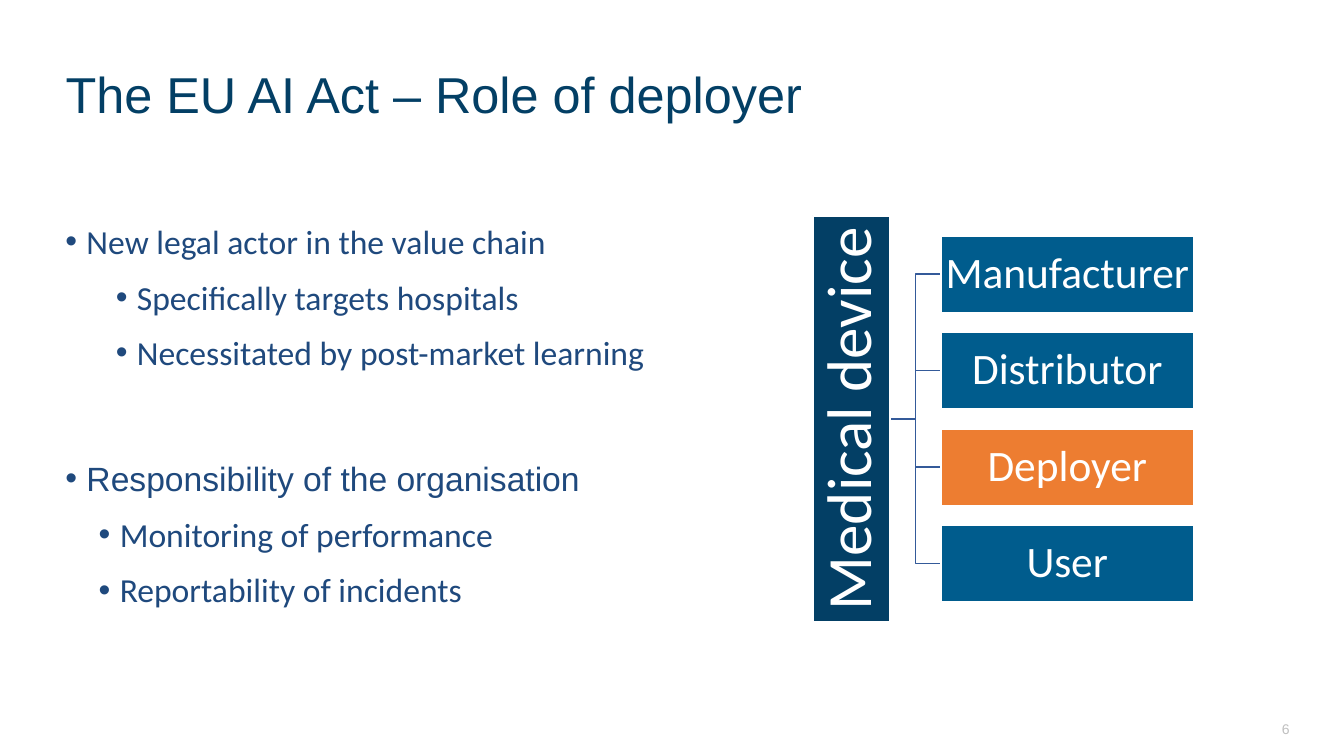
from lxml.etree import SubElement
from pptx import Presentation
from pptx.dml.color import RGBColor
from pptx.enum.shapes import MSO_CONNECTOR, MSO_SHAPE
from pptx.enum.text import MSO_ANCHOR, MSO_AUTO_SIZE, PP_ALIGN
from pptx.oxml.ns import qn
from pptx.util import Inches, Pt

COLOURS = {
    "navy": "033F65",
    "blue": "005C8D",
    "orange": "ED7D31",
    "text": "1F497D",
    "line": "345A99",
    "grey": "BFBFBF",
    "white": "FFFFFF",
}
LEFT, WIDTH = 0.55, 12.23
HANGING = 0.21

# Text, left indent, space before, font
BULLETS = [
    ("New legal actor in the value chain", 0.21, 0, "Calibri"),
    ("Specifically targets hospitals", 0.71, 11, "Calibri"),
    ("Necessitated by post-market learning", 0.71, 11, "Calibri"),
    ("Responsibility of the organisation", 0.21, 61, "Arial"),
    ("Monitoring of performance", 0.54, 11, "Calibri"),
    ("Reportability of incidents", 0.54, 11, "Calibri"),
]
ACTORS = [
    ("Manufacturer", "blue"),
    ("Distributor", "blue"),
    ("Deployer", "orange"),
    ("User", "blue"),
]


def colour(name):
    return RGBColor.from_string(COLOURS[name])


def add_run(paragraph, text, size, font, colour_name):
    run = paragraph.add_run()
    run.text = text
    run.font.size = Pt(size)
    run.font.name = font
    run.font.color.rgb = colour(colour_name)


def add_bullet(paragraph, indent):
    properties = paragraph._p.get_or_add_pPr()
    properties.set("marL", str(Inches(indent)))
    properties.set("indent", str(-Inches(HANGING)))
    bullet_colour = SubElement(properties, qn("a:buClr"))
    SubElement(bullet_colour, qn("a:srgbClr")).set("val", COLOURS["text"])
    SubElement(properties, qn("a:buFont")).set("typeface", "Arial")
    SubElement(properties, qn("a:buChar")).set("char", "•")


def fill_title(slide, box):
    title = slide.shapes.title
    title.left, title.top, title.width, title.height = map(Inches, box)
    frame = title.text_frame
    frame.auto_size = MSO_AUTO_SIZE.NONE
    frame.vertical_anchor = MSO_ANCHOR.MIDDLE
    paragraph = frame.paragraphs[0]
    paragraph.alignment = PP_ALIGN.LEFT
    paragraph.line_spacing = 0.9
    add_run(paragraph, "The EU AI Act – Role of deployer", 36, "Arial", "navy")


def add_bullet_list(slide, box):
    frame = slide.shapes.add_textbox(*map(Inches, box)).text_frame
    frame.word_wrap = True
    for index, (text, indent, space, font) in enumerate(BULLETS):
        paragraph = frame.add_paragraph() if index else frame.paragraphs[0]
        add_bullet(paragraph, indent)
        paragraph.level = int(indent > HANGING)
        paragraph.space_before = Pt(space)
        add_run(paragraph, text, 24, font, "text")


def add_page_number(slide, box):
    frame = slide.shapes.add_textbox(*map(Inches, box)).text_frame
    frame.margin_right = 0
    frame.word_wrap = True
    frame.vertical_anchor = MSO_ANCHOR.MIDDLE
    frame.paragraphs[0].alignment = PP_ALIGN.RIGHT
    add_run(frame.paragraphs[0], "6", 10, "Arial", "grey")


def add_block(slide, box, text, size, fill):
    block = slide.shapes.add_shape(MSO_SHAPE.RECTANGLE, *map(Inches, box))
    block.shadow.inherit = False
    block.fill.solid()
    block.fill.fore_color.rgb = colour(fill)
    block.line.color.rgb = colour("white")
    block.line.width = Pt(1.5)
    frame = block.text_frame
    frame.margin_left = frame.margin_right = Inches(0.02)
    frame.margin_top = frame.margin_bottom = Inches(0.02)
    frame.word_wrap = True
    frame.vertical_anchor = MSO_ANCHOR.MIDDLE
    paragraph = frame.paragraphs[0]
    paragraph.alignment = PP_ALIGN.CENTER
    paragraph.line_spacing = 0.9
    add_run(paragraph, text, size, "Calibri", fill and "white")
    return block


def add_branch(slide):
    branch = slide.shapes.add_connector(MSO_CONNECTOR.ELBOW, 0, 0, 0, 0)
    branch.line.color.rgb = colour("line")
    branch.line.width = Pt(1)
    SubElement(branch._element.spPr, qn("a:effectLst"))
    return branch


def add_actor_tree(slide, box):
    left, top, width, height = box
    bar = 0.19 * height
    pitch = 1.25 * bar
    actor_left = left + width / 3 + 0.01
    first_top = top + (height - bar - pitch * (len(ACTORS) - 1)) / 2

    # Branches come first so that they lie behind the blocks
    branches = [add_branch(slide) for _ in ACTORS]
    device = add_block(slide, (left, top, bar, height), "Medical device", 45, "navy")
    device.text_frame._txBody.bodyPr.set("vert", "vert270")
    for index, (name, fill) in enumerate(ACTORS):
        actor_box = (actor_left, first_top + index * pitch, left + width - actor_left, bar)
        actor = add_block(slide, actor_box, name, 31, fill)
        branches[index].begin_connect(device, 3)
        branches[index].end_connect(actor, 1)


def main():
    presentation = Presentation()
    presentation.slide_width = Inches(13.33)
    presentation.slide_height = Inches(7.5)
    slide = presentation.slides.add_slide(presentation.slide_layouts[5])
    fill_title(slide, (LEFT, 0.55, WIDTH, 0.83))
    add_bullet_list(slide, (LEFT, 2.14, 7.2, 4.69))
    add_page_number(slide, (12.31, 7.11, 0.48, 0.24))
    add_actor_tree(slide, (8.06, 2.14, 3.78, 4.03))
    presentation.save("out.pptx")


if __name__ == "__main__":
    main()
